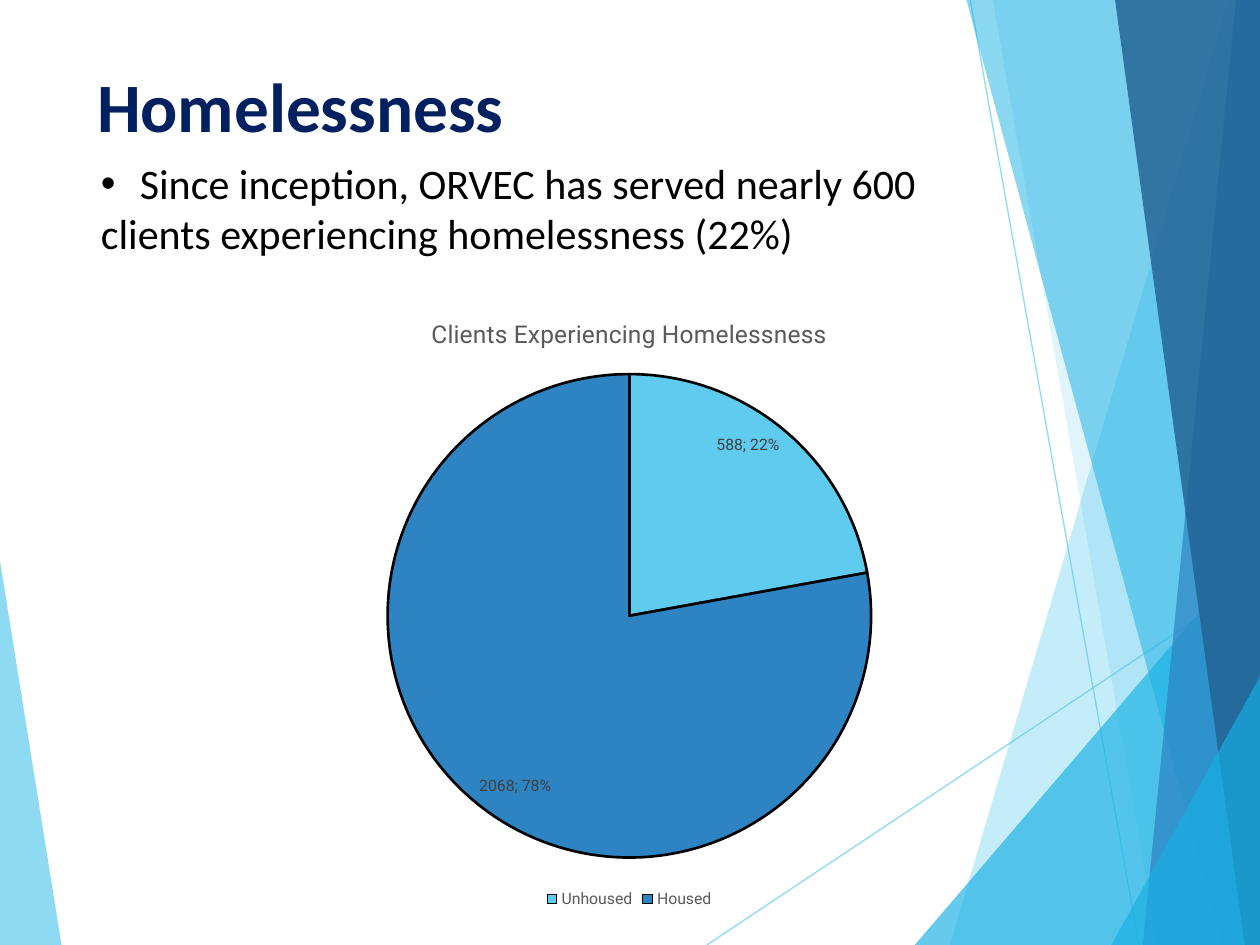
from dataclasses import dataclass

from lxml import etree
from pptx import Presentation
from pptx.chart.data import CategoryChartData
from pptx.dml.color import RGBColor
from pptx.enum.chart import XL_CHART_TYPE, XL_LABEL_POSITION, XL_LEGEND_POSITION
from pptx.enum.shapes import MSO_CONNECTOR
from pptx.enum.text import MSO_ANCHOR, MSO_AUTO_SIZE, PP_ALIGN
from pptx.oxml import parse_xml
from pptx.oxml.ns import nsdecls, qn
from pptx.util import Inches, Pt

PIE = XL_CHART_TYPE.PIE
INSIDE_END = XL_LABEL_POSITION.INSIDE_END
LEGEND_BOTTOM = XL_LEGEND_POSITION.BOTTOM
STRAIGHT = MSO_CONNECTOR.STRAIGHT
TOP = MSO_ANCHOR.TOP
NO_AUTOFIT = MSO_AUTO_SIZE.NONE
LEFT = PP_ALIGN.LEFT


@dataclass(frozen=True)
class Theme:
    sky: str = "5FCBEF"
    cyan: str = "17B0E4"
    blue: str = "2E83C3"
    deep: str = "226292"
    navy: str = "002060"
    black: str = "000000"
    gray: str = "595959"
    label: str = "404040"
    text_font: str = "Calibri"
    chart_font: str = "Roboto"
    title_size: float = 39.6
    body_size: float = 24
    chart_title_size: float = 14
    chart_size: float = 9


THEME = Theme()
RIGHT, BOTTOM = 10.01, 7.5

LEFT_FACET = ([(-0.01, 4.39), (0.49, 7.51), (-0.01, 7.5)], THEME.sky, 70)
RIGHT_FACETS = [
    ([(9.75, 0), (7.54, BOTTOM), (RIGHT, BOTTOM), (RIGHT, 0)], THEME.sky, 36),
    ([(7.88, 0), (9.19, BOTTOM), (RIGHT, BOTTOM), (RIGHT, 0)], THEME.sky, 20),
    ([(7.26, BOTTOM), (RIGHT, 4.29), (RIGHT, BOTTOM)], THEME.cyan, 66),
    ([(7.67, 0), (9.7, BOTTOM), (RIGHT, BOTTOM), (RIGHT, 0)], THEME.cyan, 50),
    ([(9.81, 0), (9.07, BOTTOM), (RIGHT, BOTTOM), (RIGHT, 0)], THEME.blue, 70),
    ([(8.85, 0), (9.88, BOTTOM), (RIGHT, BOTTOM), (RIGHT, 0)], THEME.deep, 82),
    ([(8.82, BOTTOM), (RIGHT, 5.35), (RIGHT, BOTTOM)], THEME.cyan, 66),
]
ACCENT_LINES = [((5.61, BOTTOM), (RIGHT, 4.57)), ((7.7, 0), (9.04, BOTTOM))]


def set_alpha(shape, percent):
    for color in shape.element.spPr.iter(qn("a:srgbClr")):
        etree.SubElement(color, qn("a:alpha"), val=str(percent * 1000))


def set_font(font, name, size, color, bold=False):
    font.name = name
    font.size = Pt(size)
    font.bold = bold
    font.color.rgb = RGBColor.from_string(color)


def add_facet(slide, points, color, opacity):
    corners = [(Inches(x), Inches(y)) for x, y in points]
    builder = slide.shapes.build_freeform(*corners[0])
    builder.add_line_segments(corners[1:], close=True)
    shape = builder.convert_to_shape()
    shape.shadow.inherit = False
    shape.fill.solid()
    shape.fill.fore_color.rgb = RGBColor.from_string(color)
    shape.line.fill.background()
    set_alpha(shape, opacity)


def add_accent_line(slide, start, end):
    ends = [Inches(value) for value in (*start, *end)]
    connector = slide.shapes.add_connector(STRAIGHT, *ends)
    connector.line.color.rgb = RGBColor.from_string(THEME.sky)
    connector.line.width = Pt(0.75)
    set_alpha(connector, 70)
    etree.SubElement(connector.element.spPr, qn("a:effectLst"))


def place_text(placeholder, left, top, width, height):
    placeholder.left, placeholder.top = Inches(left), Inches(top)
    placeholder.width, placeholder.height = Inches(width), Inches(height)
    frame = placeholder.text_frame
    frame.word_wrap = True
    frame.auto_size = NO_AUTOFIT
    frame.vertical_anchor = TOP
    placeholder.element.getparent().append(placeholder.element)
    return frame


def add_run(paragraph, text, size, color, bold=False):
    paragraph.alignment = LEFT
    paragraph.space_before = Pt(0)
    run = paragraph.add_run()
    run.text = text
    set_font(run.font, THEME.text_font, size, color, bold)


def set_bullet(paragraph, character=None, indent=0):
    properties = paragraph._p.get_or_add_pPr()
    properties.set("marL", str(Inches(indent)))
    properties.set("indent", str(-Inches(indent)))
    if character:
        etree.SubElement(properties, qn("a:buFont"), typeface="Arial")
        etree.SubElement(properties, qn("a:buChar"), char=character)
    else:
        etree.SubElement(properties, qn("a:buNone"))


def fill_title(slide):
    frame = place_text(slide.shapes.title, 0.67, 0.45, 6.94, 0.7)
    add_run(frame.paragraphs[0], "Homelessness", THEME.title_size, THEME.navy, True)


def fill_body(slide):
    frame = place_text(slide.placeholders[1], 0.7, 1.2, 8.92, 0.91)
    first = frame.paragraphs[0]
    add_run(first, "Since inception, ORVEC has served nearly 600", THEME.body_size, THEME.black)
    set_bullet(first, "•", 0.31)
    second = frame.add_paragraph()
    add_run(second, "clients experiencing homelessness (22%)", THEME.body_size, THEME.black)
    set_bullet(second)


def set_plot_layout(chart, x, y, width, height):
    plot_area = chart.element.find(".//" + qn("c:plotArea"))
    for existing in plot_area.findall(qn("c:layout")):
        plot_area.remove(existing)
    values = {"x": x, "y": y, "w": width, "h": height}
    parts = '<c:layoutTarget val="inner"/><c:xMode val="edge"/><c:yMode val="edge"/>'
    parts += "".join(f'<c:{name} val="{value}"/>' for name, value in values.items())
    layout = f'<c:layout {nsdecls("c")}><c:manualLayout>{parts}</c:manualLayout></c:layout>'
    plot_area.insert(0, parse_xml(layout))


def add_housing_chart(slide):
    data = CategoryChartData()
    data.categories = ["Unhoused", "Housed"]
    data.add_series("Series 1", (588, 2068))
    box = [Inches(value) for value in (0.89, 2.33, 8.21, 4.92)]
    chart = slide.shapes.add_chart(PIE, *box, data).chart
    set_font(chart.font, THEME.chart_font, 10, THEME.black)

    chart.has_title = True
    run = chart.chart_title.text_frame.paragraphs[0].add_run()
    run.text = "Clients Experiencing Homelessness"
    set_font(run.font, THEME.chart_font, THEME.chart_title_size, THEME.gray)

    chart.has_legend = True
    chart.legend.position = LEGEND_BOTTOM
    chart.legend.include_in_layout = False
    set_font(chart.legend.font, THEME.chart_font, THEME.chart_size, THEME.gray)

    plot = chart.plots[0]
    plot.vary_by_categories = True
    for index, color in enumerate((THEME.sky, THEME.blue)):
        slice_format = plot.series[0].points[index].format
        slice_format.fill.solid()
        slice_format.fill.fore_color.rgb = RGBColor.from_string(color)
        slice_format.line.color.rgb = RGBColor.from_string(THEME.black)
        slice_format.line.width = Pt(1.5)

    plot.has_data_labels = True
    labels = plot.data_labels
    labels.show_value = True
    labels.show_percentage = True
    labels.position = INSIDE_END
    set_font(labels.font, THEME.chart_font, THEME.chart_size, THEME.label)
    separator = parse_xml(f'<c:separator {nsdecls("c")}>; </c:separator>')
    labels._element.find(qn("c:showBubbleSize")).addnext(separator)
    set_plot_layout(chart, 0.26, 0.13, 0.48, 0.78)


def main():
    presentation = Presentation()
    presentation.slide_width, presentation.slide_height = Inches(10), Inches(7.5)
    slide = presentation.slides.add_slide(presentation.slide_layouts[1])
    add_facet(slide, *LEFT_FACET)
    for start, end in ACCENT_LINES:
        add_accent_line(slide, start, end)
    for facet in RIGHT_FACETS:
        add_facet(slide, *facet)
    fill_title(slide)
    fill_body(slide)
    add_housing_chart(slide)
    presentation.save("out.pptx")


if __name__ == "__main__":
    main()
